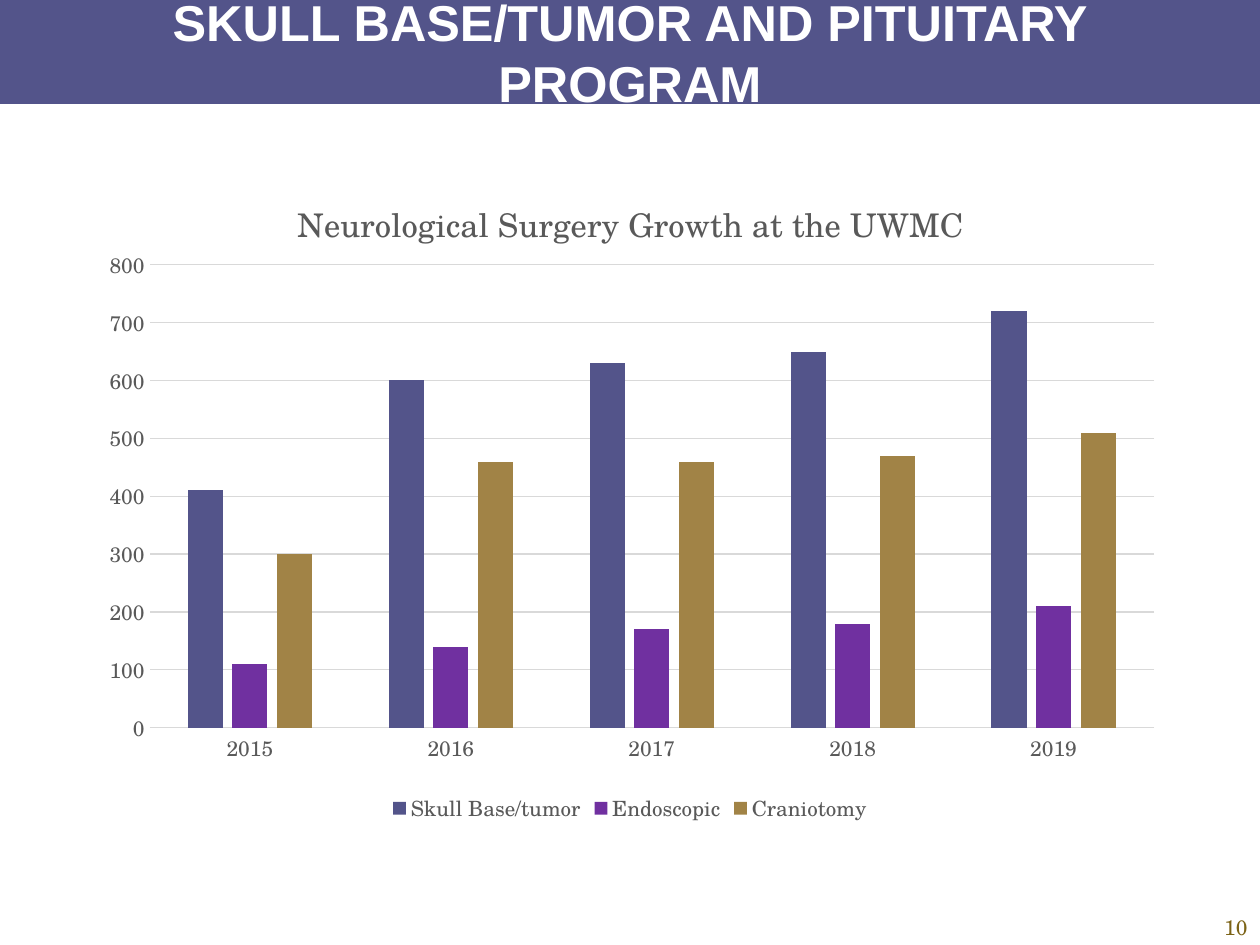
import pptx
import pptx.chart.data
import pptx.dml.color
import pptx.enum.chart
import pptx.enum.shapes
import pptx.enum.text
import pptx.oxml
import pptx.util

WIDTH, HEIGHT = 10, 7.5
SERIF = "TeX Gyre Schola"
INDIGO, GRAY, RULE = "53548A", "595959", "D9D9D9"
YEARS = ["2015", "2016", "2017", "2018", "2019"]
CASES = [
    ("Skull Base/tumor", INDIGO, (410, 600, 630, 650, 720)),
    ("Endoscopic", "7030A0", (110, 140, 170, 180, 210)),
    ("Craniotomy", "A18346", (300, 460, 460, 470, 510)),
]


def color(value):
    return pptx.dml.color.RGBColor.from_string(value)


def place(box):
    return [pptx.util.Inches(length) for length in box]


def format_font(font, size, tint, name=SERIF, bold=False):
    font.size = pptx.util.Pt(size)
    font.name = name
    font.bold = bold
    font.color.rgb = color(tint)


def write_text(frame, text, align, anchor, margins=(0, 0, 0, 0), **style):
    frame.word_wrap = True
    frame.auto_size = pptx.enum.text.MSO_AUTO_SIZE.NONE
    frame.vertical_anchor = anchor
    (frame.margin_left, frame.margin_top,
     frame.margin_right, frame.margin_bottom) = place(margins)
    para = frame.paragraphs[0]
    para.alignment = align
    span = para.add_run()
    span.text = text
    format_font(span.font, **style)


def set_layout(element, x, y, size=None):
    """Fix a chart part at shares of the chart's size."""
    for old in element.findall(pptx.oxml.ns.qn("c:layout")):
        element.remove(old)
    parts = [("xMode", "edge"), ("yMode", "edge"), ("x", x), ("y", y)]
    if size:
        parts.insert(0, ("layoutTarget", "inner"))
        parts += zip("wh", size)
    body = "".join(f'<c:{tag} val="{value}"/>' for tag, value in parts)
    layout = pptx.oxml.parse_xml(
        f'<c:layout {pptx.oxml.ns.nsdecls("c")}>'
        f"<c:manualLayout>{body}</c:manualLayout></c:layout>")
    text = element.find(pptx.oxml.ns.qn("c:tx"))
    if text is None:
        element.insert(0, layout)
    else:
        text.addnext(layout)


def add_header(page, box, text):
    left, top, width, height = box
    band = page.shapes.add_shape(
        pptx.enum.shapes.MSO_SHAPE.RECTANGLE, *place(box))
    band.shadow.inherit = False
    band.fill.solid()
    band.fill.fore_color.rgb = color(INDIGO)
    band.line.fill.background()

    title = page.shapes.title
    title._element.addprevious(band._element)  # band lies behind the title
    inset = 0.05 * width
    title.left, title.top, title.width, title.height = place(
        (left + inset, top, width - 2 * inset, height))
    write_text(title.text_frame, text, pptx.enum.text.PP_ALIGN.CENTER,
               pptx.enum.text.MSO_ANCHOR.MIDDLE,
               size=28.8, tint="FFFFFF", name="Arial", bold=True)


def add_growth_chart(page, box):
    data = pptx.chart.data.CategoryChartData()
    data.categories = YEARS
    for name, _, values in CASES:
        data.add_series(name, values)
    chart = page.shapes.add_chart(
        pptx.enum.chart.XL_CHART_TYPE.COLUMN_CLUSTERED, *place(box), data).chart
    format_font(chart.font, 10, "000000")

    # Title and legend
    chart.has_title = True
    para = chart.chart_title.text_frame.paragraphs[0]
    span = para.add_run()
    span.text = "Neurological Surgery Growth at the UWMC"
    format_font(span.font, 18.6, GRAY)
    chart.chart_title.include_in_layout = False
    set_layout(chart.chart_title._element, 0.19, 0.05)
    chart.has_legend = True
    chart.legend.position = pptx.enum.chart.XL_LEGEND_POSITION.BOTTOM
    chart.legend.include_in_layout = False
    format_font(chart.legend.font, 12, GRAY)

    # Columns
    plot = chart.plots[0]
    plot.vary_by_categories = False
    plot.gap_width, plot.overlap = 219, -27
    for series, (_, tint, _) in zip(plot.series, CASES):
        series.format.fill.solid()
        series.format.fill.fore_color.rgb = color(tint)
    set_layout(chart._chartSpace.chart.plotArea, 0.06, 0.16, (0.92, 0.69))

    # Axes
    for axis in (chart.category_axis, chart.value_axis):
        axis.major_tick_mark = pptx.enum.chart.XL_TICK_MARK.NONE
        axis.minor_tick_mark = pptx.enum.chart.XL_TICK_MARK.NONE
        format_font(axis.tick_labels.font, 12, GRAY)
    values = chart.value_axis
    values.minimum_scale, values.maximum_scale, values.major_unit = 0, 800, 100
    values.format.line.fill.background()
    values.has_major_gridlines = True
    for line in (chart.category_axis.format.line,
                 values.major_gridlines.format.line):
        line.color.rgb = color(RULE)
        line.width = pptx.util.Pt(0.75)


def add_page_number(page, box, text):
    number = page.shapes.add_textbox(*place(box))
    write_text(number.text_frame, text, pptx.enum.text.PP_ALIGN.RIGHT,
               pptx.enum.text.MSO_ANCHOR.BOTTOM, (0, 0, 0.1, 0.05),
               size=12, tint="7C6316")


def main():
    deck = pptx.Presentation()
    deck.slide_width, deck.slide_height = place((WIDTH, HEIGHT))
    page = deck.slides.add_slide(deck.slide_layouts.get_by_name("Title Only"))
    add_header(page, (0, 0, WIDTH, 0.11 * HEIGHT),
               "SKULL BASE/TUMOR AND PITUITARY PROGRAM")
    add_growth_chart(page, (WIDTH / 15, HEIGHT / 6,
                            WIDTH * 13 / 15, HEIGHT * 0.71))
    add_page_number(page, (0.925 * WIDTH, HEIGHT - 0.25, 0.075 * WIDTH, 0.26),
                    "10")
    deck.save("out.pptx")


if __name__ == "__main__":
    main()
